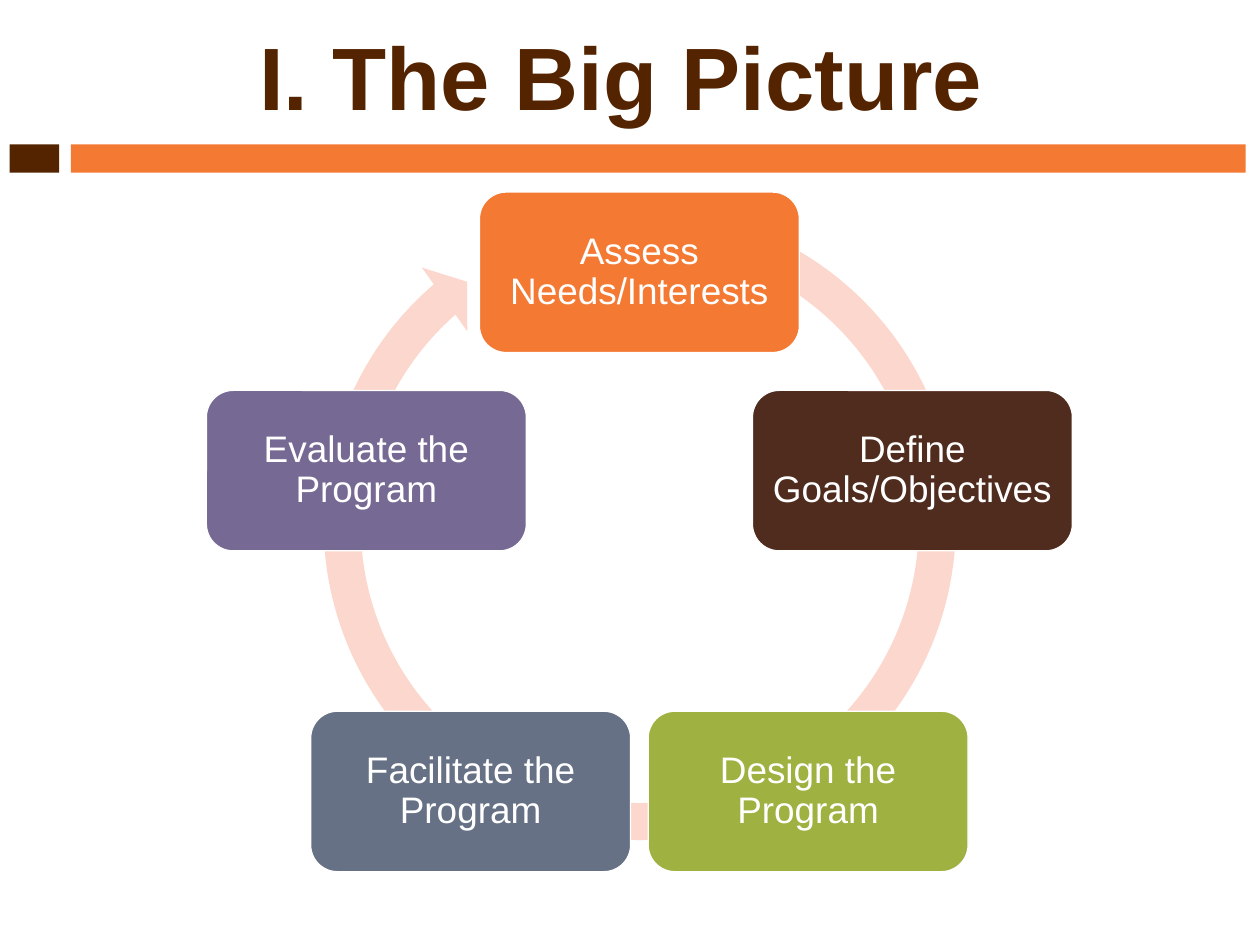
"""Build a slide showing the five-step program planning cycle."""
from math import cos, radians, sin

from pptx import Presentation
from pptx.dml.color import RGBColor
from pptx.enum.shapes import MSO_SHAPE
from pptx.enum.text import MSO_ANCHOR, PP_ALIGN
from pptx.util import Cm, Pt

RECT = MSO_SHAPE.RECTANGLE
ROUNDED = MSO_SHAPE.ROUNDED_RECTANGLE
CIRCULAR_ARROW = MSO_SHAPE.CIRCULAR_ARROW
MIDDLE = MSO_ANCHOR.MIDDLE
CENTER = PP_ALIGN.CENTER

COLORS = {
    "white": "FFFFFF",
    "brown": "542400",
    "orange": "F47932",
    "pink": "FBD7CE",
    "dark": "4F2C1D",
    "green": "9FB140",
    "slate": "667185",
    "purple": "766993",
}
TITLE_FONT = {"name": "Arial", "size": Pt(72), "bold": True}
STEP_FONT = {"name": "Arial", "size": Pt(30), "bold": False}
STEPS = [
    ("Assess Needs/Interests", "orange"),
    ("Define Goals/Objectives", "dark"),
    ("Design the Program", "green"),
    ("Facilitate the Program", "slate"),
    ("Evaluate the Program", "purple"),
]
CENTER_X, CENTER_Y, RADIUS = 18.33, 16.04, 8.23
STEP_W, STEP_H = 9.17, 4.6


def add_filled(kind, x, y, w, h, color):
    sp = s.shapes.add_shape(kind, Cm(x), Cm(y), Cm(w), Cm(h))
    sp.shadow.inherit = False
    sp.fill.solid()
    sp.fill.fore_color.rgb = RGBColor.from_string(COLORS[color])
    sp.line.fill.background()
    return sp


def write_text(sp, text, font, color):
    tf = sp.text_frame
    tf.word_wrap = True
    tf.vertical_anchor = MIDDLE
    p = tf.paragraphs[0]
    p.alignment = CENTER
    p.line_spacing = 0.9
    r = p.add_run()
    r.text = text
    for name, value in font.items():
        setattr(r.font, name, value)
    r.font.color.rgb = RGBColor.from_string(COLORS[color])
    return tf


prs = Presentation()
prs.slide_width, prs.slide_height = Cm(36.12), Cm(27.1)
s = prs.slides.add_slide(prs.slide_layouts[6])

add_filled(RECT, 0.28, 4.14, 1.42, 0.81, "brown")
add_filled(RECT, 2.03, 4.14, 33.68, 0.81, "orange")

title = s.shapes.add_textbox(Cm(0), Cm(0.25), Cm(35.61), Cm(4.17))
write_text(title, "I. The Big Picture", TITLE_FONT, "brown")

cycle = add_filled(CIRCULAR_ARROW, 8.69, 5.38, 19.3, 19.3, "pink")
for i, value in enumerate([0.055, 3.307, 137.42, 174.067, 0.058]):
    cycle.adjustments[i] = value

for i, (text, color) in enumerate(STEPS):
    angle = radians(i * 360 / len(STEPS))
    x = CENTER_X + RADIUS * sin(angle) - STEP_W / 2
    y = CENTER_Y - RADIUS * cos(angle) - STEP_H / 2
    step = add_filled(ROUNDED, x, y, STEP_W, STEP_H, color)
    step.line.color.rgb = RGBColor.from_string(COLORS["white"])
    step.line.width = Pt(1)
    tf = write_text(step, text, STEP_FONT, "white")
    for side in ("left", "top", "right", "bottom"):
        setattr(tf, f"margin_{side}", Cm(0.3))

prs.save("out.pptx")
